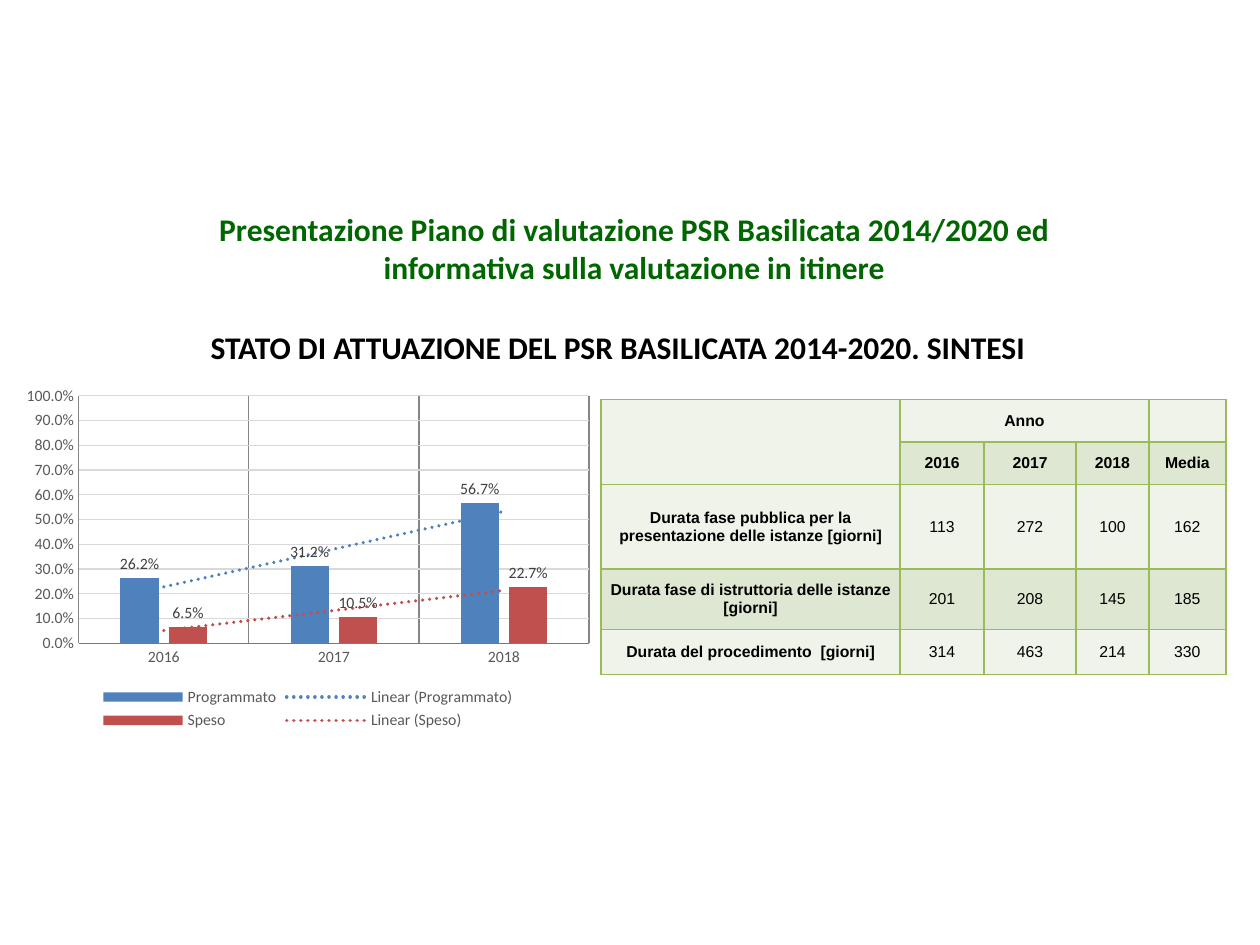
"""Builds the slide on the progress of the PSR Basilicata 2014-2020 plan."""
from lxml.etree import SubElement
from pptx import Presentation
from pptx.chart.data import CategoryChartData
from pptx.dml.color import RGBColor
from pptx.enum.chart import XL_CHART_TYPE as ChartType
from pptx.enum.chart import XL_LABEL_POSITION as LabelPosition
from pptx.enum.chart import XL_LEGEND_POSITION as LegendPosition
from pptx.enum.chart import XL_TICK_MARK as TickMark
from pptx.enum.text import MSO_ANCHOR as Anchor
from pptx.enum.text import MSO_AUTO_SIZE as AutoSize
from pptx.enum.text import PP_ALIGN as Align
from pptx.oxml import parse_xml
from pptx.oxml.ns import nsdecls, qn
from pptx.util import Cm, Pt


def colour(hex_code):
    return RGBColor.from_string(hex_code)


def style_font(font, name, size, hex_code, bold=False):
    font.name = name
    font.size = Pt(size)
    font.bold = bold
    font.color.rgb = colour(hex_code)


def write(frame, text, align=Align.CENTER, **font_format):
    frame.word_wrap = True
    paragraph = frame.paragraphs[0]
    paragraph.alignment = align
    run = paragraph.add_run()
    run.text = text
    style_font(run.font, **font_format)


class SlideBuilder:
    heading_font = "Calibri"
    table_font = "Arial"
    black = "000000"
    axis_grey = "595959"
    label_grey = "404040"
    bands = ("EFF3EA", "DEE7D1")
    border = "9BBB59"

    def __init__(self, slide):
        self.slide = slide

    def heading(self, text, left, top, width, height, hex_code):
        box = self.slide.shapes.add_textbox(Cm(left), Cm(top), Cm(width), Cm(height))
        write(box.text_frame, text, name=self.heading_font, size=18,
              hex_code=hex_code, bold=True)
        box.text_frame.auto_size = AutoSize.SHAPE_TO_FIT_TEXT

    def axis(self, axis, grid_hex):
        axis.major_tick_mark = axis.minor_tick_mark = TickMark.NONE
        style_font(axis.tick_labels.font, self.heading_font, 9, self.axis_grey)
        axis.has_major_gridlines = True
        grid = axis.major_gridlines.format.line
        grid.color.rgb = colour(grid_hex)
        grid.width = Pt(0.75)

    def trend(self, series, hex_code):
        trendline = parse_xml(
            f'<c:trendline {nsdecls("c", "a")}><c:spPr><a:ln w="{Pt(2)}" cap="rnd">'
            f'<a:solidFill><a:srgbClr val="{hex_code}"/></a:solidFill>'
            '<a:prstDash val="sysDot"/></a:ln></c:spPr>'
            '<c:trendlineType val="linear"/><c:dispRSqr val="0"/>'
            '<c:dispEq val="0"/></c:trendline>')
        series._element.find(qn("c:cat")).addprevious(trendline)

    def column_chart(self, years, shares, left, top, width, height):
        data = CategoryChartData(number_format="0.0%")
        data.categories = years
        for name, values, _ in shares:
            data.add_series(name, values)
        chart = self.slide.shapes.add_chart(
            ChartType.COLUMN_CLUSTERED, Cm(left), Cm(top), Cm(width), Cm(height), data).chart
        style_font(chart.font, self.heading_font, 10, self.black)
        chart.has_title = False
        chart.has_legend = True
        chart.legend.position = LegendPosition.BOTTOM
        chart.legend.include_in_layout = False
        style_font(chart.legend.font, self.heading_font, 9, self.axis_grey)

        self.axis(chart.category_axis, "868686")
        base = chart.category_axis.format.line
        base.color.rgb = colour("4F81BD")
        base.width = Pt(0.75)
        percent = chart.value_axis
        self.axis(percent, "D9D9D9")
        percent.minimum_scale, percent.maximum_scale, percent.major_unit = 0, 1, 0.1
        percent.tick_labels.number_format = "0.0%"
        percent.tick_labels.number_format_is_linked = False
        percent.format.line.fill.background()

        plot = chart.plots[0]
        plot.vary_by_categories = False
        plot.gap_width, plot.overlap = 219, -27
        for series, (_, _, hex_code) in zip(plot.series, shares):
            series.format.fill.solid()
            series.format.fill.fore_color.rgb = colour(hex_code)
            labels = series.data_labels
            labels.show_value = True
            labels.number_format = "0.0%"
            labels.number_format_is_linked = False
            labels.position = LabelPosition.OUTSIDE_END
            style_font(labels.font, self.heading_font, 9, self.label_grey)
            self.trend(series, hex_code)

    def cell_borders(self, cell):
        properties = cell._tc.get_or_add_tcPr()
        for side in ("lnL", "lnR", "lnT", "lnB"):
            line = SubElement(properties, qn(f"a:{side}"), w=str(Pt(1)))
            fill = SubElement(line, qn("a:solidFill"))
            SubElement(fill, qn("a:srgbClr"), val=self.border)

    def table(self, rows, left, top, widths, heights, merges):
        table = self.slide.shapes.add_table(
            len(rows), len(widths), Cm(left), Cm(top),
            Cm(sum(widths)), Cm(sum(heights))).table
        table.first_row = table.horz_banding = False
        for column, width in zip(table.columns, widths):
            column.width = Cm(width)
        for r, (row, height) in enumerate(zip(rows, heights)):
            table.rows[r].height = Cm(height)
            for c, text in enumerate(row):
                cell = table.cell(r, c)
                cell.margin_left = cell.margin_right = Cm(0.15)
                cell.margin_top = cell.margin_bottom = 0
                cell.vertical_anchor = Anchor.MIDDLE
                self.cell_borders(cell)
                cell.fill.solid()
                cell.fill.fore_color.rgb = colour(self.bands[r % 2])
                if text:
                    write(cell.text_frame, text, name=self.table_font, size=9,
                          hex_code=self.black, bold=r < 2 or c == 0)
        for first, last in merges:
            table.cell(*first).merge(table.cell(*last))


def main():
    deck = Presentation()
    deck.slide_width, deck.slide_height = Cm(25.4), Cm(19.05)
    builder = SlideBuilder(deck.slides.add_slide(deck.slide_layouts[6]))

    builder.heading("Presentazione Piano di valutazione PSR Basilicata 2014/2020 ed "
                    "informativa sulla valutazione in itinere",
                    3.71, 4.11, 18.16, 1.8, "006600")
    builder.heading("STATO DI ATTUAZIONE DEL PSR BASILICATA 2014-2020. SINTESI",
                    3.99, 6.48, 16.94, 1.02, builder.black)

    years = ["2016", "2017", "2018"]
    shares = [
        ("Programmato", (0.262, 0.312, 0.567), "4F81BD"),
        ("Speso", (0.065, 0.105, 0.227), "C0504D"),
    ]
    builder.column_chart(years, shares, 0.3, 7.65, 11.81, 7.16)

    durations = [
        ["", "Anno", "", "", ""],
        ["", *years, "Media"],
        ["Durata fase pubblica per la presentazione delle istanze [giorni]",
         "113", "272", "100", "162"],
        ["Durata fase di istruttoria delle istanze [giorni]", "201", "208", "145", "185"],
        ["Durata del procedimento  [giorni]", "314", "463", "214", "330"],
    ]
    builder.table(durations, 12.12, 8.05,
                  widths=(6.02, 1.7, 1.85, 1.47, 1.55),
                  heights=(0.86, 0.86, 1.7, 1.22, 0.91),
                  merges=[((0, 0), (1, 0)), ((0, 1), (0, 3))])
    deck.save("out.pptx")


if __name__ == "__main__":
    main()
